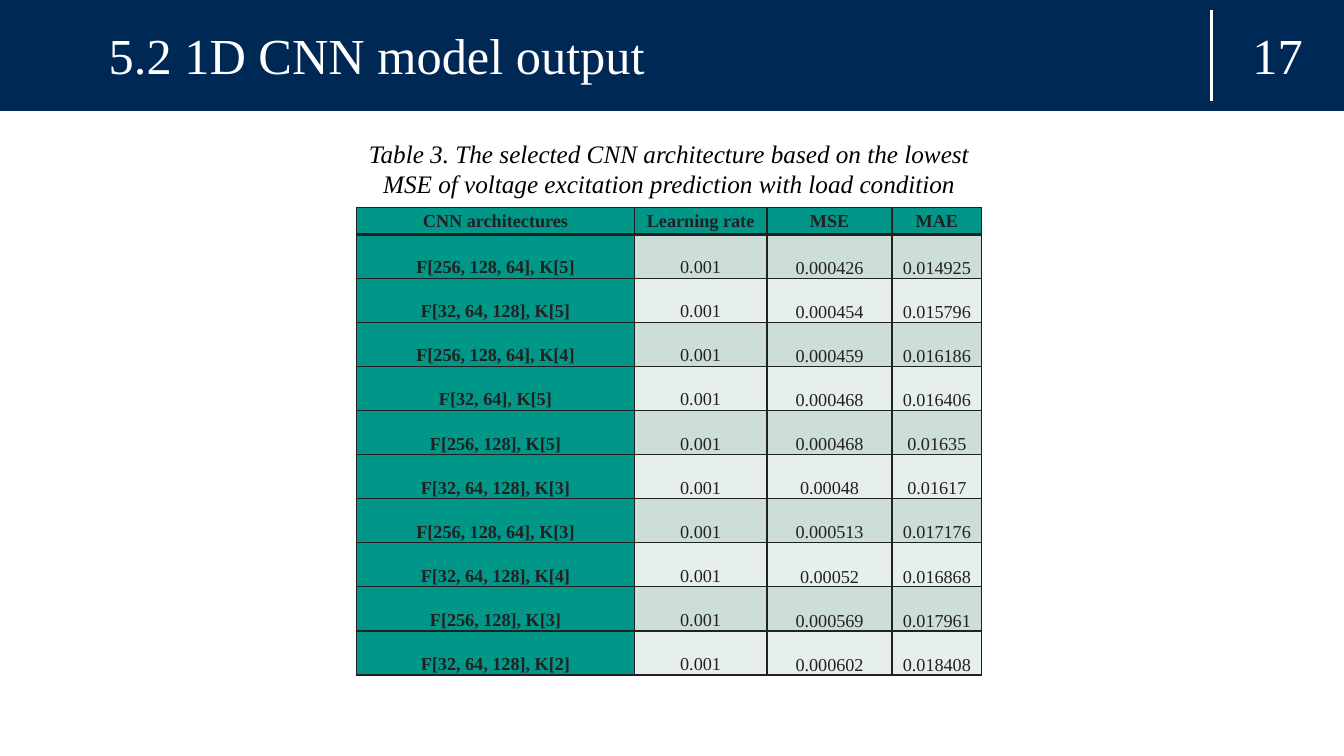
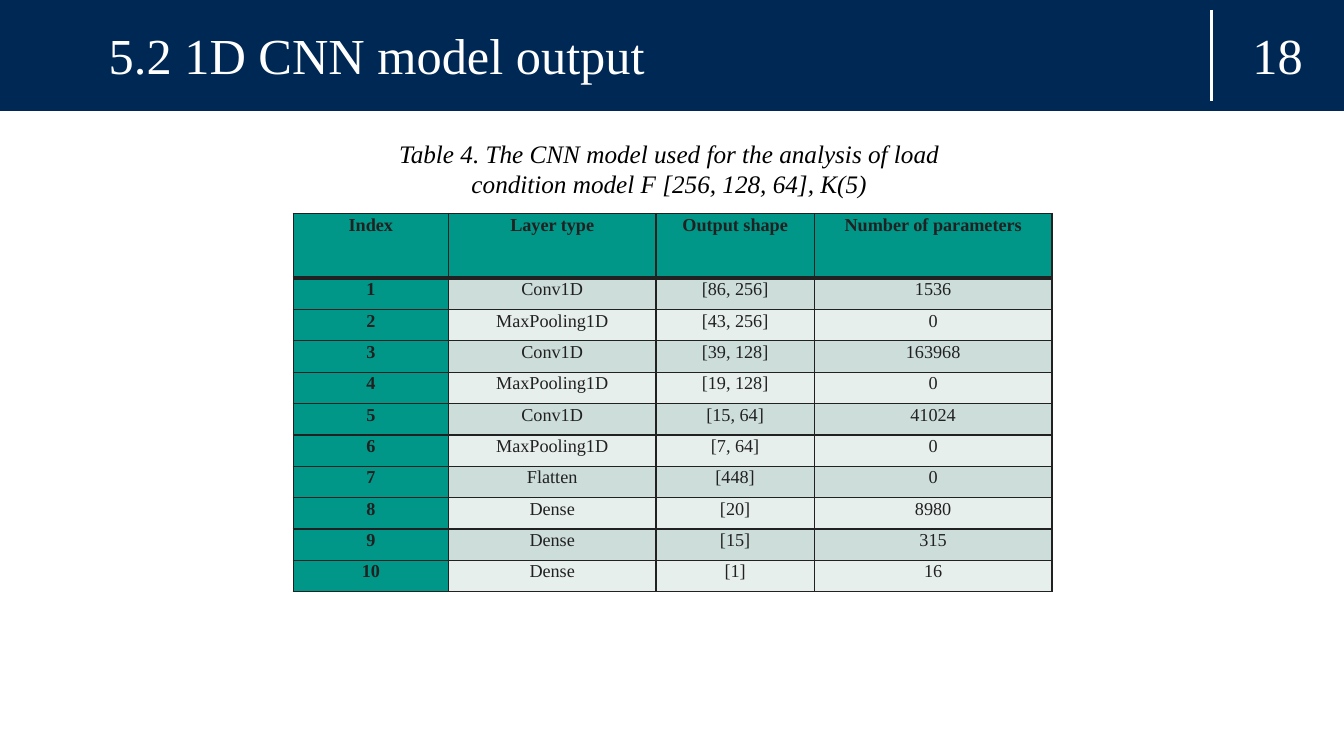
from lxml import etree
from pptx import Presentation
from pptx.dml.color import RGBColor
from pptx.enum.shapes import MSO_CONNECTOR, MSO_SHAPE
from pptx.enum.text import MSO_ANCHOR, MSO_AUTO_SIZE, PP_ALIGN
from pptx.oxml.ns import qn
from pptx.util import Cm, Pt

RECTANGLE = MSO_SHAPE.RECTANGLE
STRAIGHT = MSO_CONNECTOR.STRAIGHT
TOP, MIDDLE, BOTTOM = MSO_ANCHOR.TOP, MSO_ANCHOR.MIDDLE, MSO_ANCHOR.BOTTOM
LEFT, CENTER = PP_ALIGN.LEFT, PP_ALIGN.CENTER
NO_AUTOFIT = MSO_AUTO_SIZE.NONE

COLORS = {
    "backdrop": "212121",
    "ink": "212121",
    "white": "FFFFFF",
    "black": "000000",
    "navy": "002855",
    "teal": "009688",
    "band_dark": "CCDDDA",
    "band_light": "E7EFED",
}
FONT = "Times New Roman"
WIDTH, HEIGHT = 33.87, 19.05
BAND_HEIGHT = 2.79
DIVIDER_LEFT = 30.53
HEADING_TOP, HEADING_HEIGHT = 0.25, 2.26
TITLE_ONLY = 5
GRID, RULE = Pt(1), Pt(3)

FONTS = {
    "heading": {"size": Pt(36), "bold": False},
    "caption": {"size": Pt(18), "italic": True},
    "label": {"size": Pt(13), "bold": True},
    "value": {"size": Pt(13), "bold": False},
}
FRAMES = {
    "title": {"margin_left": Cm(0.89), "margin_right": Cm(0.25),
              "vertical_anchor": MIDDLE, "auto_size": NO_AUTOFIT, "word_wrap": True},
    "number": {"vertical_anchor": MIDDLE, "word_wrap": True},
    "caption": {"word_wrap": True},
}
CELL = {"margin_left": Cm(0.18), "margin_right": Cm(0.18),
        "margin_top": 0, "margin_bottom": 0, "vertical_anchor": TOP}
LOWERED = {"margin_top": Cm(0.55)}
AT_BOTTOM = {"vertical_anchor": BOTTOM}
AT_MIDDLE = {"vertical_anchor": MIDDLE}

ARCHITECTURES = [
    ("CNN architectures", "Learning rate", "MSE", "MAE"),
    ("F[256, 128, 64], K[5]", "0.001", "0.000426", "0.014925"),
    ("F[32, 64, 128], K[5]", "0.001", "0.000454", "0.015796"),
    ("F[256, 128, 64], K[4]", "0.001", "0.000459", "0.016186"),
    ("F[32, 64], K[5]", "0.001", "0.000468", "0.016406"),
    ("F[256, 128], K[5]", "0.001", "0.000468", "0.01635"),
    ("F[32, 64, 128], K[3]", "0.001", "0.00048", "0.01617"),
    ("F[256, 128, 64], K[3]", "0.001", "0.000513", "0.017176"),
    ("F[32, 64, 128], K[4]", "0.001", "0.00052", "0.016868"),
    ("F[256, 128], K[3]", "0.001", "0.000569", "0.017961"),
    ("F[32, 64, 128], K[2]", "0.001", "0.000602", "0.018408"),
]
LAYERS = [
    ("Index", "Layer type", "Output shape", "Number of parameters"),
    ("1", "Conv1D", "[86, 256]", "1536"),
    ("2", "MaxPooling1D", "[43, 256]", "0"),
    ("3", "Conv1D", "[39, 128]", "163968"),
    ("4", "MaxPooling1D", "[19, 128]", "0"),
    ("5", "Conv1D", "[15, 64]", "41024"),
    ("6", "MaxPooling1D", "[7, 64]", "0"),
    ("7", "Flatten", "[448]", "0"),
    ("8", "Dense", "[20]", "8980"),
    ("9", "Dense", "[15]", "315"),
    ("10", "Dense", "[1]", "16"),
]


def color(name):
    return RGBColor.from_string(COLORS[name])


def apply_format(target, values):
    for name, value in values.items():
        setattr(target, name, value)


class Deck:
    def __init__(self):
        self.presentation = Presentation()
        self.presentation.slide_width = Cm(WIDTH)
        self.presentation.slide_height = Cm(HEIGHT)
        self.slide = None

    def add_slide(self, title, number):
        layout = self.presentation.slide_layouts[TITLE_ONLY]
        self.slide = self.presentation.slides.add_slide(layout)
        background = self.slide.background.fill
        background.solid()
        background.fore_color.rgb = color("backdrop")
        self.band(BAND_HEIGHT, HEIGHT - BAND_HEIGHT, "white", 2)
        self.band(0, BAND_HEIGHT, "navy", 0.75)
        self.divider()
        self.text(str(number), "number", "heading", "white",
                  (DIVIDER_LEFT, HEADING_TOP, WIDTH - DIVIDER_LEFT, HEADING_HEIGHT))
        self.title(title)

    def band(self, top, height, fill, line_width):
        shape = self.slide.shapes.add_shape(RECTANGLE, 0, Cm(top), Cm(WIDTH), Cm(height))
        shape.shadow.inherit = False
        shape.fill.solid()
        shape.fill.fore_color.rgb = color(fill)
        shape.line.color.rgb = color(fill)
        shape.line.width = Pt(line_width)

    def divider(self):
        connector = self.slide.shapes.add_connector(
            STRAIGHT, Cm(DIVIDER_LEFT), Cm(2.54), Cm(DIVIDER_LEFT), Cm(HEADING_TOP))
        connector.line.color.rgb = color("white")
        connector.line.width = Pt(1.5)
        etree.SubElement(connector.element.spPr, qn("a:effectLst"))

    def title(self, text):
        shape = self.slide.shapes.title
        apply_format(shape, {"left": Cm(1.85), "top": Cm(HEADING_TOP),
                             "width": Cm(28.14), "height": Cm(HEADING_HEIGHT)})
        apply_format(shape.text_frame, FRAMES["title"])
        self.fill_text(shape.text_frame, text, "heading", "white", LEFT)
        self.slide.shapes.element.append(shape.element)

    def text(self, text, frame, style, ink, box):
        shape = self.slide.shapes.add_textbox(*map(Cm, box))
        apply_format(shape.text_frame, FRAMES[frame])
        self.fill_text(shape.text_frame, text, style, ink, CENTER)

    def caption(self, text):
        self.text(text, "caption", "caption", "black", (8.99, 3.35, 15.75, 1.8))

    def fill_text(self, text_frame, text, style, ink, alignment):
        paragraph = text_frame.paragraphs[0]
        paragraph.alignment = alignment
        run = paragraph.add_run()
        run.text = text
        run.font.name = FONT
        run.font.color.rgb = color(ink)
        apply_format(run.font, FONTS[style])
        return paragraph

    def table(self, rows, left, top, widths, header_height, row_height,
              header_format, column_formats):
        heights = [header_height] + [row_height] * (len(rows) - 1)
        frame = self.slide.shapes.add_table(
            len(rows), len(widths), Cm(left), Cm(top), Cm(sum(widths)), Cm(sum(heights)))
        table = frame.table
        for column, width in zip(table.columns, widths):
            column.width = Cm(width)
        for row, height in zip(table.rows, heights):
            row.height = Cm(height)
        for row_index, values in enumerate(rows):
            for column_index, value in enumerate(values):
                is_label = row_index == 0 or column_index == 0
                band = "band_dark" if row_index % 2 else "band_light"
                cell = table.cell(row_index, column_index)
                apply_format(cell, CELL)
                apply_format(cell, column_formats[column_index] if row_index else header_format)
                self.borders(cell, row_index)
                cell.fill.solid()
                cell.fill.fore_color.rgb = color("teal" if is_label else band)
                paragraph = self.fill_text(
                    cell.text_frame, value, "label" if is_label else "value", "ink", CENTER)
                paragraph.line_spacing = 1.07

    def borders(self, cell, row_index):
        widths = {"lnL": GRID, "lnR": GRID,
                  "lnT": RULE if row_index == 1 else GRID,
                  "lnB": RULE if row_index == 0 else GRID}
        properties = cell._tc.get_or_add_tcPr()
        for side, width in widths.items():
            line = etree.SubElement(properties, qn(f"a:{side}"), w=str(int(width)))
            fill = etree.SubElement(line, qn("a:solidFill"))
            etree.SubElement(fill, qn("a:srgbClr"), val=COLORS["ink"])

    def save(self):
        self.presentation.save("out.pptx")


def main():
    deck = Deck()
    title = "5.2 1D CNN model output"

    deck.add_slide(title, 17)
    deck.table(ARCHITECTURES, 8.99, 5.22, (6.99, 3.35, 3.15, 2.26), 0.69, 1.11,
               AT_MIDDLE, (LOWERED, LOWERED, AT_BOTTOM, AT_BOTTOM))
    deck.caption("Table 3. The selected CNN architecture based on the lowest "
                 "MSE of voltage excitation prediction with load condition")

    deck.add_slide(title, 18)
    deck.caption("Table 4. The CNN model used for the analysis of load "
                 "condition model F [256, 128, 64], K(5)")
    deck.table(LAYERS, 7.39, 5.38, (3.91, 5.23, 3.99, 5.99), 1.63, 0.79,
               {}, ({}, {}, {}, {}))

    deck.save()


if __name__ == "__main__":
    main()
